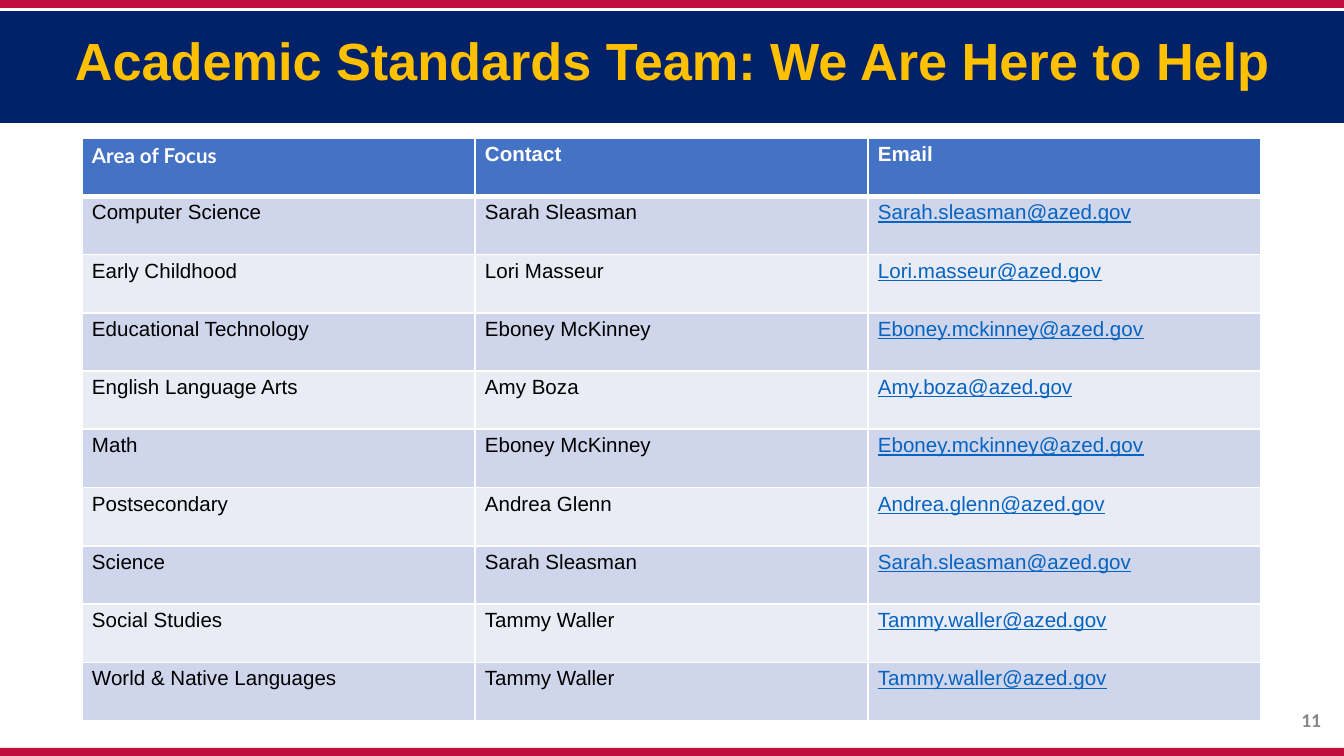
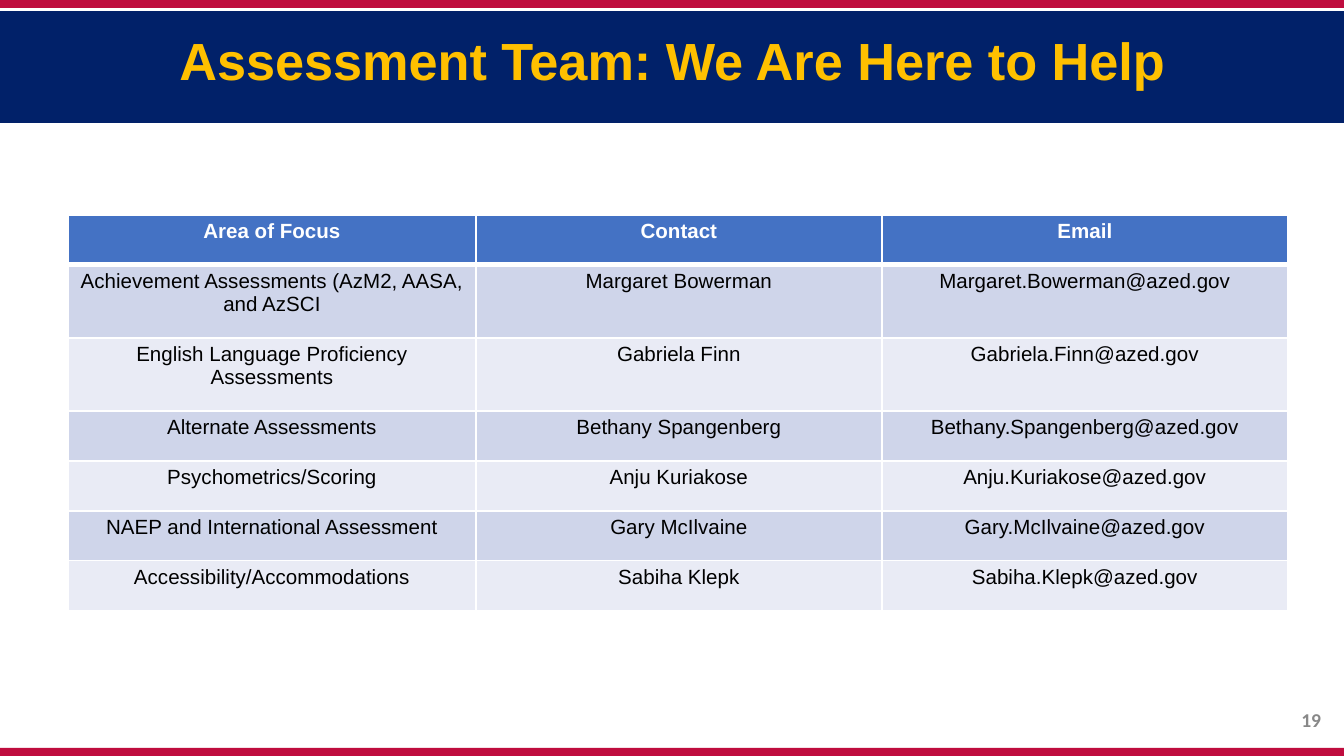
from dataclasses import dataclass

from lxml.etree import SubElement
from pptx import Presentation
from pptx.dml.color import RGBColor
from pptx.enum.shapes import MSO_SHAPE as Shape
from pptx.enum.text import MSO_ANCHOR as Anchor, PP_ALIGN as Align
from pptx.oxml.ns import qn
from pptx.util import Pt

SCALE = 914400 / 134.4
SLIDE_WIDTH, SLIDE_HEIGHT = 1344, 756
HEADINGS = ("Area of Focus", "Contact", "Email")


@dataclass(frozen=True)
class Theme:
    red: str = "BF0D3E"
    navy: str = "012169"
    gold: str = "FFC000"
    grey: str = "888888"
    white: str = "FFFFFF"
    black: str = "000000"
    link: str = "0563C1"
    heading: str = "4472C4"
    bands: tuple = ("CFD5EA", "E9EBF5")
    font: str = "Arial"
    number_font: str = "Calibri"
    title_size: float = 28
    table_size: float = 11
    number_size: float = 10.5


THEME = Theme()

STRIPES = [
    (0, 8, THEME.red),
    (748, 8, THEME.red),
    (11, 112, THEME.navy),
]

TEAMS = [
    {
        "title": "Academic Standards Team: We Are Here to Help",
        "number": "11",
        "corner": (82, 138),
        "columns": (393, 393, 393),
        "rows": [583 / 10] * 10,
        "align": Align.LEFT,
        "linked": True,
        "first_font": "Lato",
        "contacts": [
            ("Computer Science", "Sarah Sleasman", "Sarah.sleasman@azed.gov"),
            ("Early Childhood", "Lori Masseur", "Lori.masseur@azed.gov"),
            ("Educational Technology", "Eboney McKinney", "Eboney.mckinney@azed.gov"),
            ("English Language Arts", "Amy Boza", "Amy.boza@azed.gov"),
            ("Math", "Eboney McKinney", "Eboney.mckinney@azed.gov"),
            ("Postsecondary", "Andrea Glenn", "Andrea.glenn@azed.gov"),
            ("Science", "Sarah Sleasman", "Sarah.sleasman@azed.gov"),
            ("Social Studies", "Tammy Waller", "Tammy.waller@azed.gov"),
            ("World & Native Languages", "Tammy Waller", "Tammy.waller@azed.gov"),
        ],
    },
    {
        "title": "Assessment Team: We Are Here to Help",
        "number": "19",
        "corner": (68, 215),
        "columns": (408, 406, 406),
        "rows": [50] + [73] * 2 + [50] * 4,
        "align": Align.CENTER,
        "linked": False,
        "first_font": THEME.font,
        "contacts": [
            ("Achievement Assessments (AzM2, AASA, and AzSCI", "Margaret Bowerman",
             "Margaret.Bowerman@azed.gov"),
            ("English Language Proficiency Assessments", "Gabriela Finn",
             "Gabriela.Finn@azed.gov"),
            ("Alternate Assessments", "Bethany Spangenberg", "Bethany.Spangenberg@azed.gov"),
            ("Psychometrics/Scoring", "Anju Kuriakose", "Anju.Kuriakose@azed.gov"),
            ("NAEP and International Assessment", "Gary McIlvaine", "Gary.McIlvaine@azed.gov"),
            ("Accessibility/Accommodations", "Sabiha Klepk", "Sabiha.Klepk@azed.gov"),
        ],
    },
]


def px(length):
    return round(length * SCALE)


def write(paragraph, text, font, size, color, bold, align):
    paragraph.text = text
    paragraph.alignment = align
    paragraph.font.name = font
    paragraph.font.size = Pt(size)
    paragraph.font.bold = bold
    paragraph.font.color.rgb = RGBColor.from_string(color)


def add_stripe(slide, top, height, color):
    shape = slide.shapes.add_shape(Shape.RECTANGLE, 0, px(top), px(SLIDE_WIDTH), px(height))
    shape.shadow.inherit = False
    shape.fill.solid()
    shape.fill.fore_color.rgb = RGBColor.from_string(color)
    shape.line.fill.background()


def add_text(slide, box, insets, *style):
    frame = slide.shapes.add_textbox(*map(px, box)).text_frame
    frame.word_wrap = True
    frame.vertical_anchor = Anchor.MIDDLE
    frame.margin_left = frame.margin_right = px(insets[0])
    frame.margin_top = frame.margin_bottom = px(insets[1])
    write(frame.paragraphs[0], *style)
    return frame.paragraphs[0]


def set_borders(cell, bottom):
    properties = cell._tc.get_or_add_tcPr()
    for position, (side, width) in enumerate(zip("LRTB", (1, 1, 1, bottom))):
        line = properties.makeelement(qn(f"a:ln{side}"), {"w": str(Pt(width))})
        fill = SubElement(line, qn("a:solidFill"))
        SubElement(fill, qn("a:srgbClr"), val=THEME.white)
        properties.insert(position, line)


def add_contact_table(slide, team):
    content = [HEADINGS, *team["contacts"]]
    columns, rows = team["columns"], team["rows"]
    table = slide.shapes.add_table(
        len(rows), len(columns), *map(px, (*team["corner"], sum(columns), sum(rows)))
    ).table
    for column, width in zip(table.columns, columns):
        column.width = px(width)
    for row_index, (row, height) in enumerate(zip(table.rows, rows)):
        row.height = px(height)
        is_heading = row_index == 0
        fill = THEME.heading if is_heading else THEME.bands[(row_index - 1) % 2]
        for column_index, cell in enumerate(row.cells):
            is_link = team["linked"] and column_index == 2 and not is_heading
            color = THEME.white if is_heading else THEME.link if is_link else THEME.black
            font = team["first_font"] if row_index == column_index == 0 else THEME.font
            cell.margin_left = cell.margin_right = px(10)
            cell.margin_top = cell.margin_bottom = px(5)
            cell.fill.solid()
            cell.fill.fore_color.rgb = RGBColor.from_string(fill)
            set_borders(cell, 3 if is_heading else 1)
            paragraph = cell.text_frame.paragraphs[0]
            write(paragraph, content[row_index][column_index], font, THEME.table_size,
                  color, is_heading, team["align"])
            paragraph.font.underline = is_link


def build_slide(presentation, team):
    slide = presentation.slides.add_slide(presentation.slide_layouts[6])
    for stripe in STRIPES:
        add_stripe(slide, *stripe)
    title = add_text(slide, (0, 28, SLIDE_WIDTH, 71), (0, 0), team["title"],
                     THEME.font, THEME.title_size, THEME.gold, True, Align.CENTER)
    title.line_spacing = 0.9
    add_text(slide, (1032, 700, 302, 40), (13, 7), team["number"],
             THEME.number_font, THEME.number_size, THEME.grey, True, Align.RIGHT)
    add_contact_table(slide, team)


def main():
    presentation = Presentation()
    presentation.slide_width = px(SLIDE_WIDTH)
    presentation.slide_height = px(SLIDE_HEIGHT)
    for team in TEAMS:
        build_slide(presentation, team)
    presentation.save("out.pptx")


if __name__ == "__main__":
    main()
